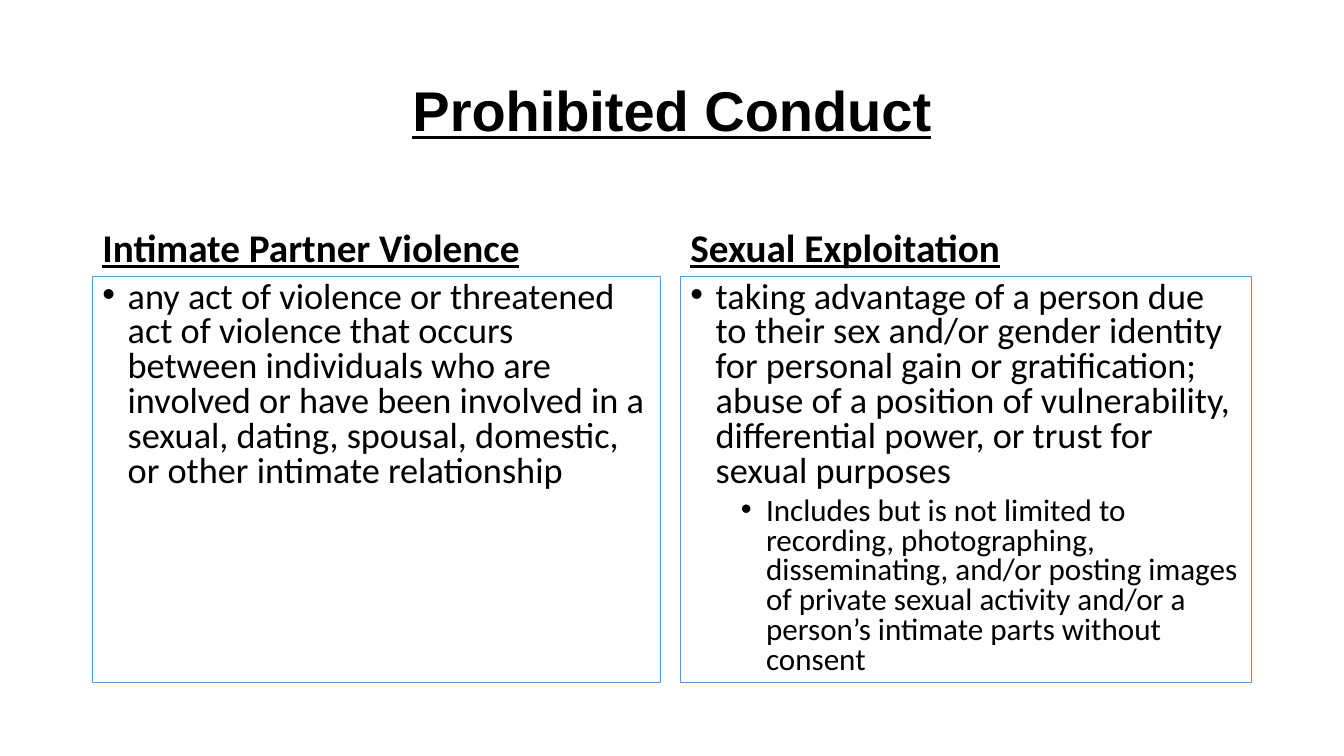
from pptx import Presentation
from pptx.dml.color import RGBColor as RGB
from pptx.enum.text import MSO_ANCHOR as Anchor, MSO_AUTO_SIZE as Fit, PP_ALIGN as Align
from pptx.oxml.ns import qn
from pptx.util import Pt
from lxml.etree import SubElement as Sub

BLACK = RGB(0, 0, 0)
BLUE = RGB(0x5B, 0x9B, 0xD5)

LEFT, TOP = 66, 132.5
HEAD, BODY = 64.8, 290.2
COLS = [
    (LEFT, 406, "Intimate Partner Violence", [
        "any act of violence or threatened act of violence that occurs between individuals "
        "who are involved or have been involved in a sexual, dating, spousal, domestic, "
        "or other intimate relationship",
    ]),
    (486, 408.2, "Sexual Exploitation", [
        "taking advantage of a person due to their sex and/or gender identity for personal "
        "gain or gratification; abuse of a position of vulnerability, differential power, "
        "or trust for sexual purposes",
        "Includes but is not limited to recording, photographing, disseminating, and/or "
        "posting images of private sexual activity and/or a person’s intimate parts "
        "without consent",
    ]),
]


class Page:
    font = "Calibri"
    title_font = "Arial"
    sizes = (25.9, 22.2)
    indents = (18, 54)
    gaps = (0, 5)

    def __init__(self, deck):
        self.slide = deck.slides.add_slide(deck.slide_layouts[4])

    def place(self, idx, box, anchor):
        shape = self.slide.placeholders[idx]
        shape.left, shape.top, shape.width, shape.height = map(Pt, box)
        frame = shape.text_frame
        frame.word_wrap = True
        frame.auto_size = Fit.NONE
        frame.vertical_anchor = anchor
        return shape

    def style(self, para, size, name, bold=False):
        for run in para.runs:
            font = run.font
            font.name, font.size = name, Pt(size)
            font.bold = font.underline = bold
            font.color.rgb = BLACK

    def label(self, idx, box, text, size, name, anchor, align):
        frame = self.place(idx, box, anchor).text_frame
        frame.text = text
        para = frame.paragraphs[0]
        para.alignment = align
        para.line_spacing = 0.9
        para.space_before = Pt(0)
        self.style(para, size, name, True)

    def title(self, box, text):
        self.label(0, box, text, 40, self.title_font, Anchor.MIDDLE, Align.CENTER)

    def head(self, idx, box, text):
        self.label(idx, box, text, 28, self.font, Anchor.BOTTOM, Align.LEFT)

    def bullets(self, idx, box, items):
        shape = self.place(idx, box, Anchor.TOP)
        shape.line.color.rgb = BLUE
        shape.line.width = Pt(0.75)
        shape.text_frame.text = "\n".join(items)
        for level, para in enumerate(shape.text_frame.paragraphs):
            para.level = level
            props = para._p.get_or_add_pPr()
            props.set("marL", str(Pt(self.indents[level])))
            props.set("indent", str(Pt(-18)))
            Sub(props, qn("a:buFont")).set("typeface", "Arial")
            Sub(props, qn("a:buChar")).set("char", "•")
            para.line_spacing = 0.8
            para.space_before = Pt(self.gaps[level])
            self.style(para, self.sizes[level], self.font)


def main():
    deck = Presentation()
    deck.slide_width, deck.slide_height = Pt(960), Pt(540)
    page = Page(deck)
    page.title((LEFT, 28.8, 828, 104.4), "Prohibited Conduct")
    for col, (left, width, head, items) in enumerate(COLS):
        page.head(2 * col + 1, (left, TOP, width, HEAD), head)
        page.bullets(2 * col + 2, (left, TOP + HEAD, width, BODY), items)
    deck.save("out.pptx")


if __name__ == "__main__":
    main()
